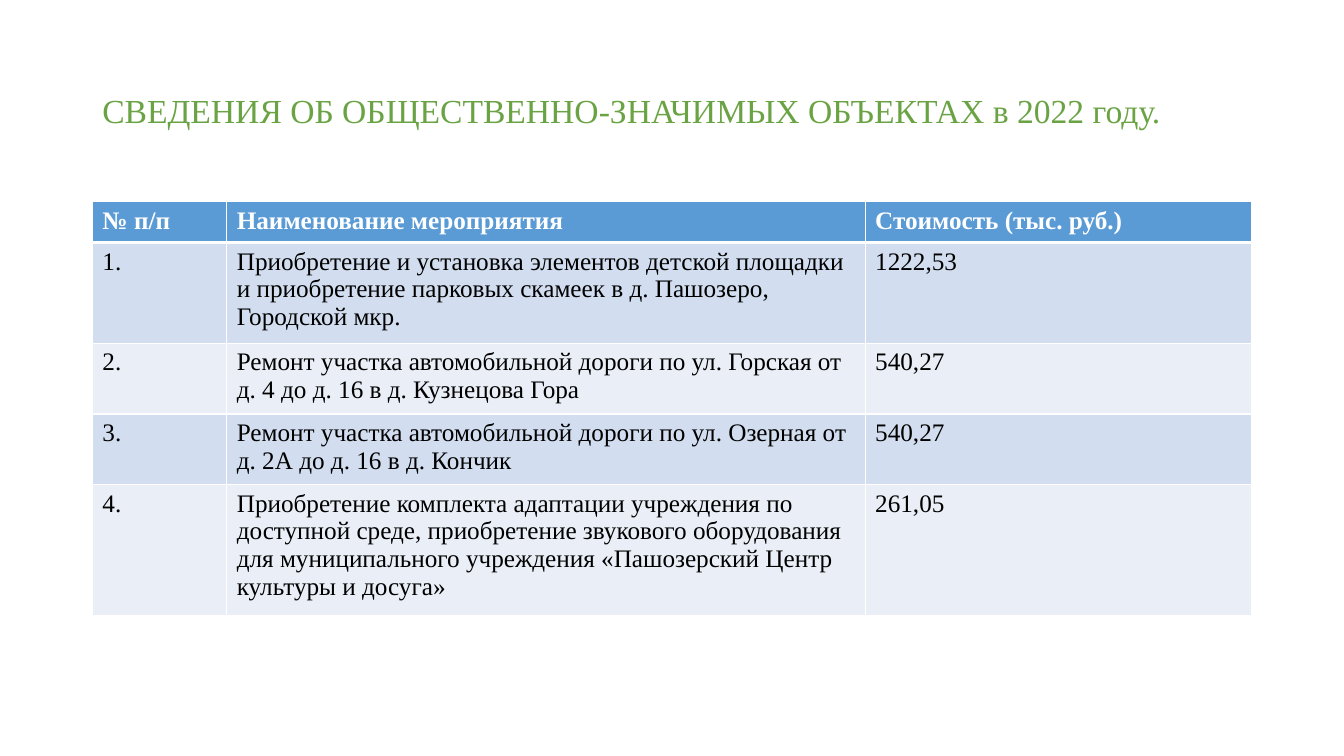
from typing import NamedTuple

from lxml import etree
from pptx import Presentation
from pptx.dml.color import RGBColor
from pptx.enum.text import MSO_ANCHOR
from pptx.oxml.ns import qn
from pptx.util import Emu, Pt

PX = 9525
FONT = "Times New Roman"
MIDDLE = MSO_ANCHOR.MIDDLE

GREEN = RGBColor(0x6A, 0xA3, 0x43)
BLUE = RGBColor(0x5B, 0x9B, 0xD5)
BAND = RGBColor(0xD2, 0xDE, 0xEF)
PALE = RGBColor(0xEA, 0xEF, 0xF7)
WHITE = RGBColor(0xFF, 0xFF, 0xFF)
BLACK = RGBColor(0x00, 0x00, 0x00)

LEFT, WIDTH = 88, 1104
TITLE_TOP, TITLE_HIGH = 38, 139
TABLE_TOP, ROW_HIGH = 192, 39
COLS = (128, 608, 368)
THIN, THICK = 1, 3

TITLE = "СВЕДЕНИЯ ОБ ОБЩЕСТВЕННО-ЗНАЧИМЫХ ОБЪЕКТАХ в 2022 году."


class Row(NamedTuple):
    number: str
    event: str
    cost: str


HEAD = Row("№ п/п", "Наименование мероприятия", "Стоимость (тыс. руб.)")
WORKS = (
    Row("1.", "Приобретение и установка элементов детской площадки и "
        "приобретение парковых скамеек в д. Пашозеро, Городской мкр.", "1222,53"),
    Row("2.", "Ремонт участка автомобильной дороги по ул. Горская от "
        "д. 4 до д. 16 в д. Кузнецова Гора", "540,27"),
    Row("3.", "Ремонт участка автомобильной дороги по ул. Озерная от "
        "д. 2А до д. 16 в д. Кончик", "540,27"),
    Row("4.", "Приобретение комплекта адаптации учреждения по доступной среде, "
        "приобретение звукового оборудования для муниципального учреждения "
        "«Пашозерский Центр культуры и досуга»", "261,05"),
)


def px(count: int) -> Emu:
    return Emu(count * PX)


def add_run(para, text: str, size: int, color: RGBColor, bold: bool = False) -> None:
    run = para.add_run()
    run.text = text
    font = run.font
    font.name, font.size, font.bold = FONT, Pt(size), bold
    font.color.rgb = color


def set_edges(cell, top: int, bottom: int) -> None:
    """Draw white cell borders; top and bottom are widths in points."""
    props = cell._tc.get_or_add_tcPr()
    edges = {"a:lnL": THIN, "a:lnR": THIN, "a:lnT": top, "a:lnB": bottom}
    for place, (tag, width) in enumerate(edges.items()):
        line = etree.Element(qn(tag), w=str(Pt(width)))
        fill = etree.SubElement(line, qn("a:solidFill"))
        etree.SubElement(fill, qn("a:srgbClr"), val=str(WHITE))
        props.insert(place, line)


def add_title(slide) -> None:
    box = slide.shapes.add_textbox(
        px(LEFT), px(TITLE_TOP), px(WIDTH), px(TITLE_HIGH))
    frame = box.text_frame
    frame.word_wrap = True
    frame.vertical_anchor = MIDDLE
    para = frame.paragraphs[0]
    para.line_spacing = 0.9
    add_run(para, TITLE, 24, GREEN)


def add_works(slide) -> None:
    rows = (HEAD, *WORKS)
    table = slide.shapes.add_table(
        len(rows), len(COLS), px(LEFT), px(TABLE_TOP),
        px(WIDTH), px(ROW_HIGH * len(rows))).table
    for column, width in zip(table.columns, COLS):
        column.width = px(width)
    for index, row in enumerate(rows):
        head = index == 0
        fill = BLUE if head else BAND if index % 2 else PALE
        for cell, text in zip(table.rows[index].cells, row):
            cell.fill.solid()
            cell.fill.fore_color.rgb = fill
            set_edges(cell, THICK if index == 1 else THIN, THICK if head else THIN)
            add_run(cell.text_frame.paragraphs[0], text, 18,
                    WHITE if head else BLACK, head)


def main() -> None:
    deck = Presentation()
    deck.slide_width, deck.slide_height = px(1280), px(720)
    slide = deck.slides.add_slide(deck.slide_layouts[6])
    add_title(slide)
    add_works(slide)
    deck.save("out.pptx")


if __name__ == "__main__":
    main()
